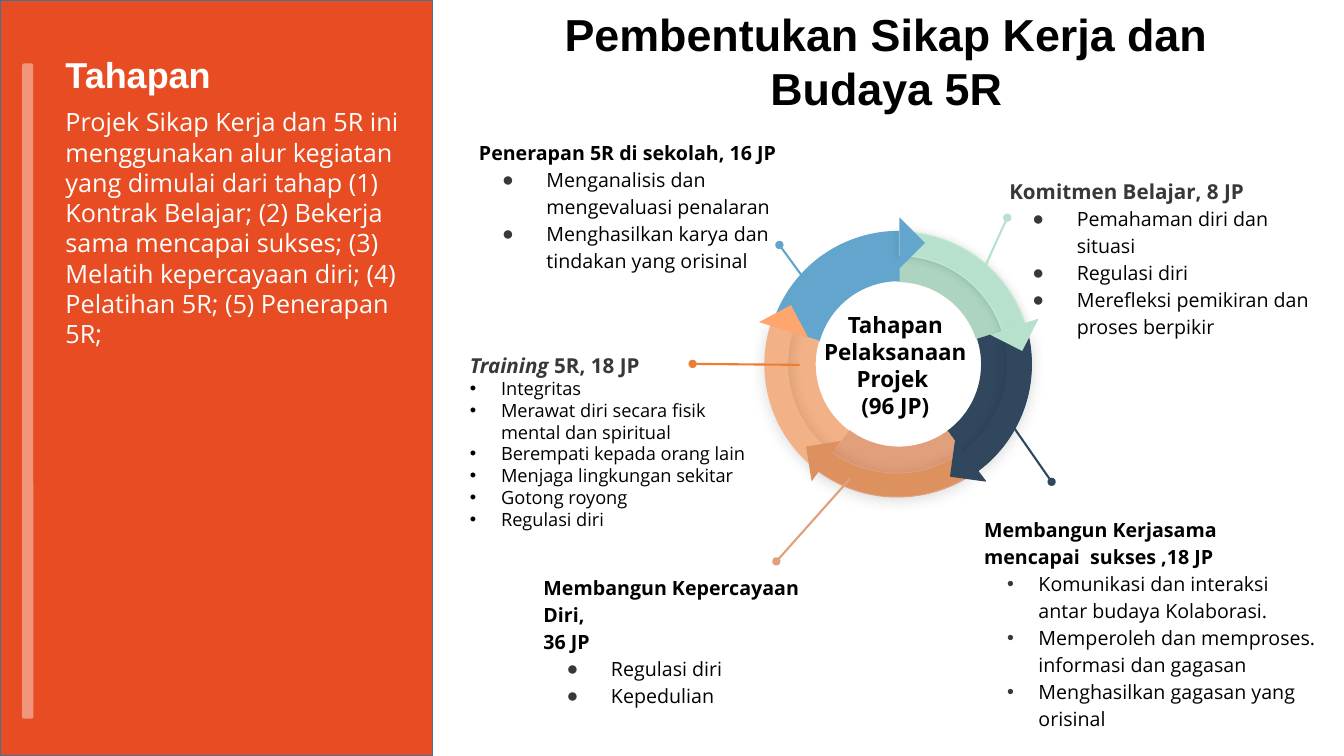
from dataclasses import dataclass
from typing import Any, NamedTuple

from lxml.etree import SubElement as Sub
from pptx import Presentation
from pptx.dml.color import RGBColor as Rgb
from pptx.enum.shapes import MSO_CONNECTOR as Link, MSO_SHAPE as Form
from pptx.enum.text import MSO_ANCHOR as Anchor, MSO_AUTO_SIZE as Auto, PP_ALIGN as Align
from pptx.oxml.ns import qn
from pptx.util import Inches, Pt


@dataclass(frozen=True)
class Theme:
    sans: str = "Open Sans"
    bold: str = "Arial"
    black: str = "000000"
    white: str = "FFFFFF"
    gray: str = "383838"
    panel: str = "E84C22"
    edge: str = "42719B"
    bar: str = "F1967D"
    mint: str = "B7E1CD"
    sage: str = "ACD4C1"
    rim: str = "BFEBD6"
    blue: str = "63A5CD"
    navy: str = "30475E"
    peach: str = "F2B186"
    tip: str = "FFA66F"
    clay: str = "E29F7B"
    rust: str = "DD915E"
    flame: str = "ED7D31"
    title: float = 32
    head: float = 25.7
    lead: float = 18
    core: float = 16
    name: float = 14.7
    text: float = 14
    small: float = 13


T = Theme()


class Box(NamedTuple):
    x: float
    y: float
    w: float
    h: float


class Run(NamedTuple):
    text: str
    size: float = T.text
    color: str = T.black
    bold: bool = True
    slant: bool = False
    font: str = T.sans


class Mark(NamedTuple):
    sign: str
    left: float
    hang: float
    color: str = T.gray


class Note(NamedTuple):
    box: Box
    heads: list[list[Run]]
    items: list[str]
    mark: Mark
    size: float = T.text
    gap: float = 1.15


class Glow(NamedTuple):
    blur: float
    drop: float


class Arc(NamedTuple):
    x: float
    y: float
    turn: float
    flip: bool
    cuts: tuple[float, float, float]
    fill: str
    line: str | None = None
    glow: Glow | None = None


class Tip(NamedTuple):
    x: float
    y: float
    side: float
    turn: float
    fill: str
    line: str | None = None


class Wire(NamedTuple):
    x1: float
    y1: float
    x2: float
    y2: float
    color: str


RING = 2.63
DEEP = Glow(11.2, 1.5)
DISC = Mark("●", 0.67, 0.44)
DOT = Mark("•", 0.54, 0.31)
FLUSH = Mark("•", 0.31, 0.31, T.black)

PARTS = [
    Arc(7.59, 2.3, 30, False, (143.52, 187.39, 0.19), T.sage),
    Arc(7.6, 2.29, 330, True, (143.68, 188.74, 0.19), T.blue),
    Arc(7.59, 2.3, 150, False, (201.58, 28.14, 0.19), T.peach),
    Arc(7.6, 2.3, 210, True, (201.74, 28.85, 0.19), T.navy),
    Arc(7.6, 2.3, 150, False, (158.24, 202.08, 0.19), T.clay),
    Arc(7.6, 2.3, 30, False, (144.14, 188.09, 0.09), T.mint, T.rim, Glow(6.8, 0.8)),
    Arc(7.6, 2.3, 210, True, (201.79, 26.24, 0.09), T.navy, T.navy, DEEP),
    Arc(7.58, 2.3, 150, False, (201.47, 28.75, 0.09), T.peach, None, DEEP),
    Tip(9.88, 3.06, 0.36, 296.9, T.mint),
    Arc(7.58, 2.3, 210, True, (157.39, 200.08, 0.09), T.rust, T.clay, DEEP),
    Tip(9.45, 4.4, 0.35, 7.9, T.navy, T.navy),
    Tip(8.02, 4.4, 0.35, 81, T.rust),
    Tip(7.59, 3.09, 0.36, 152, T.tip),
    Tip(8.74, 2.23, 0.36, 225, T.blue),
]

WIRES = [
    Wire(9.99, 2.16, 9.69, 2.82, T.mint),
    Wire(7.73, 2.43, 8, 2.8, T.blue),
    Wire(10.43, 4.78, 9.95, 4.09, T.navy),
    Wire(6.87, 3.61, 7.93, 3.62, T.flame),
    Wire(7.7, 5.57, 8.43, 4.75, T.clay),
]

NOTES = [
    Note(Box(9.88, 1.61, 3.34, 2.18), [[Run("Komitmen Belajar, 8 JP", T.name, T.gray)]],
         ["Pemahaman diri dan situasi", "Regulasi diri",
          "Merefleksi pemikiran dan proses berpikir"], DISC),
    Note(Box(4.62, 1.23, 3.38, 0.65), [[Run("Penerapan 5R di sekolah, 16 JP")]],
         ["Menganalisis dan mengevaluasi penalaran",
          "Menghasilkan karya dan tindakan yang orisinal"], DISC),
    Note(Box(4.53, 3.33, 3.15, 2.76),
         [[Run("Training", T.name, T.gray, slant=True), Run(" 5R, 18 JP", T.name, T.gray)]],
         ["Integritas", "Merawat diri secara fisik mental dan spiritual",
          "Berempati kepada orang lain", "Menjaga lingkungan sekitar",
          "Gotong royong", "Regulasi diri"], FLUSH, T.small, 1.0),
    Note(Box(5.26, 5.55, 3.15, 0.65),
         [[Run("Membangun Kepercayaan Diri,")], [Run("36 JP")]],
         ["Regulasi diri", "Kepedulian"], DISC),
    Note(Box(9.63, 4.97, 3.57, 0.65), [[Run("Membangun Kerjasama mencapai  sukses ,18 JP")]],
         ["Komunikasi dan interaksi antar budaya Kolaborasi.",
          "Memperoleh dan memproses. informasi dan gagasan",
          "Menghasilkan gagasan yang orisinal"], DOT),
]


def place(shape: Any, box: Box, anchor: Anchor = Anchor.TOP) -> Any:
    shape.left, shape.top, shape.width, shape.height = map(Inches, box)
    frame = shape.text_frame
    frame.word_wrap, frame.auto_size = True, Auto.NONE
    frame.vertical_anchor = anchor
    frame.margin_left = frame.margin_right = Inches(0.13)
    frame.margin_top = frame.margin_bottom = Inches(0.13)
    return frame


def write(frame: Any, runs: list[Run], gap: float = 1.0, mark: Mark | None = None,
          align: Align = Align.LEFT) -> None:
    first = frame.paragraphs[0]
    para = frame.add_paragraph() if first.runs else first
    para.alignment, para.line_spacing = align, gap
    para.space_before = para.space_after = Pt(0)
    props = para._p.get_or_add_pPr()
    props.set("marL", str(Inches(mark.left if mark else 0)))
    props.set("indent", str(-Inches(mark.hang if mark else 0)))
    if mark:
        Sub(Sub(props, qn("a:buClr")), qn("a:srgbClr"), val=mark.color)
        Sub(props, qn("a:buFont"), typeface=T.bold)
        Sub(props, qn("a:buChar"), char=mark.sign)
    else:
        Sub(props, qn("a:buNone"))
    for part in runs:
        run = para.add_run()
        run.text = part.text
        font = run.font
        font.name, font.size = part.font, Pt(part.size)
        font.bold, font.italic = part.bold, part.slant
        font.color.rgb = Rgb.from_string(part.color)


def draw(slide: Any, form: Form, box: Box, fill: str, line: str | None = None,
         width: float = 0.75) -> Any:
    shape = slide.shapes.add_shape(form, *map(Inches, box))
    shape.shadow.inherit = False
    shape.fill.solid()
    shape.fill.fore_color.rgb = Rgb.from_string(fill)
    if line:
        shape.line.color.rgb = Rgb.from_string(line)
        shape.line.width = Pt(width)
    else:
        shape.line.fill.background()
    return shape


def bend(slide: Any, arc: Arc) -> None:
    shape = draw(slide, Form.BLOCK_ARC, Box(arc.x, arc.y, RING, RING), arc.fill, arc.line)
    shape.rotation = arc.turn
    for spot, cut in enumerate(arc.cuts):
        shape.adjustments[spot] = cut
    props = shape.element.spPr
    if arc.flip:
        props.find(qn("a:xfrm")).set("flipH", "1")
    if arc.glow:
        shade = Sub(props.find(qn("a:effectLst")), qn("a:outerShdw"),
                    blurRad=str(Pt(arc.glow.blur)), dist=str(Pt(arc.glow.drop)),
                    dir="5400000", rotWithShape="0")
        tint = Sub(shade, qn("a:srgbClr"), val=T.black)
        Sub(tint, qn("a:alpha"), val="15000")


def point(slide: Any, tip: Tip) -> None:
    box = Box(tip.x, tip.y, tip.side, tip.side)
    draw(slide, Form.RIGHT_TRIANGLE, box, tip.fill, tip.line).rotation = tip.turn


def join(slide: Any, wire: Wire) -> None:
    link = slide.shapes.add_connector(Link.STRAIGHT, *map(Inches, wire[:4]))
    link.line.color.rgb = Rgb.from_string(wire.color)
    link.line.width = Pt(1.5)
    props = link.element.spPr
    Sub(props.find(qn("a:ln")), qn("a:headEnd"), type="oval")
    Sub(props, qn("a:effectLst"))


def label(slide: Any, box: Box, anchor: Anchor = Anchor.TOP) -> Any:
    return place(slide.shapes.add_textbox(*map(Inches, box)), box, anchor)


def main() -> None:
    deck = Presentation()
    deck.slide_width, deck.slide_height = Inches(13.33), Inches(7.5)
    slide = deck.slides.add_slide(deck.slide_layouts.get_by_name("Comparison"))
    title, *slots = [slot for slot in slide.placeholders if slot.placeholder_format.idx < 10]
    frame = place(title, Box(4.62, 0.23, 8.34, 0.75), Anchor.MIDDLE)
    write(frame, [Run("Pembentukan Sikap Kerja dan Budaya 5R", T.title, font=T.bold)],
          align=Align.CENTER)
    for spot, note in enumerate(NOTES):
        frame = place(slots[spot], note.box) if spot < len(slots) else label(slide, note.box)
        for head in note.heads:
            write(frame, head, 1.15)
        for item in note.items:
            write(frame, [Run(item, note.size, bold=False)], note.gap, note.mark)

    draw(slide, Form.RECTANGLE, Box(0, 0, 4.29, 7.5), T.panel, T.edge, 1)
    bar = draw(slide, Form.ROUNDED_RECTANGLE, Box(0.22, 0.63, 0.11, 6.5), T.bar)
    bar.adjustments[0] = 0.17
    write(label(slide, Box(0.52, 0.42, 4.46, 0.63), Anchor.MIDDLE),
          [Run("Tahapan", T.head, T.white, font=T.bold)])
    lead = ("Projek Sikap Kerja dan 5R ini menggunakan alur kegiatan yang dimulai dari "
            "tahap (1) Kontrak Belajar; (2) Bekerja sama mencapai sukses; (3) Melatih "
            "kepercayaan diri; (4) Pelatihan 5R; (5) Penerapan 5R;")
    write(label(slide, Box(0.52, 0.93, 3.7, 2.86)), [Run(lead, T.lead, T.white, False)])

    for part in PARTS:
        if isinstance(part, Arc):
            bend(slide, part)
        else:
            point(slide, part)
    for wire in WIRES:
        join(slide, wire)
    core = label(slide, Box(8.04, 2.96, 1.68, 1.35))
    for line in ("Tahapan Pelaksanaan Projek ", "(96 JP)"):
        write(core, [Run(line, T.core)], align=Align.CENTER)
    deck.save("out.pptx")


if __name__ == "__main__":
    main()
